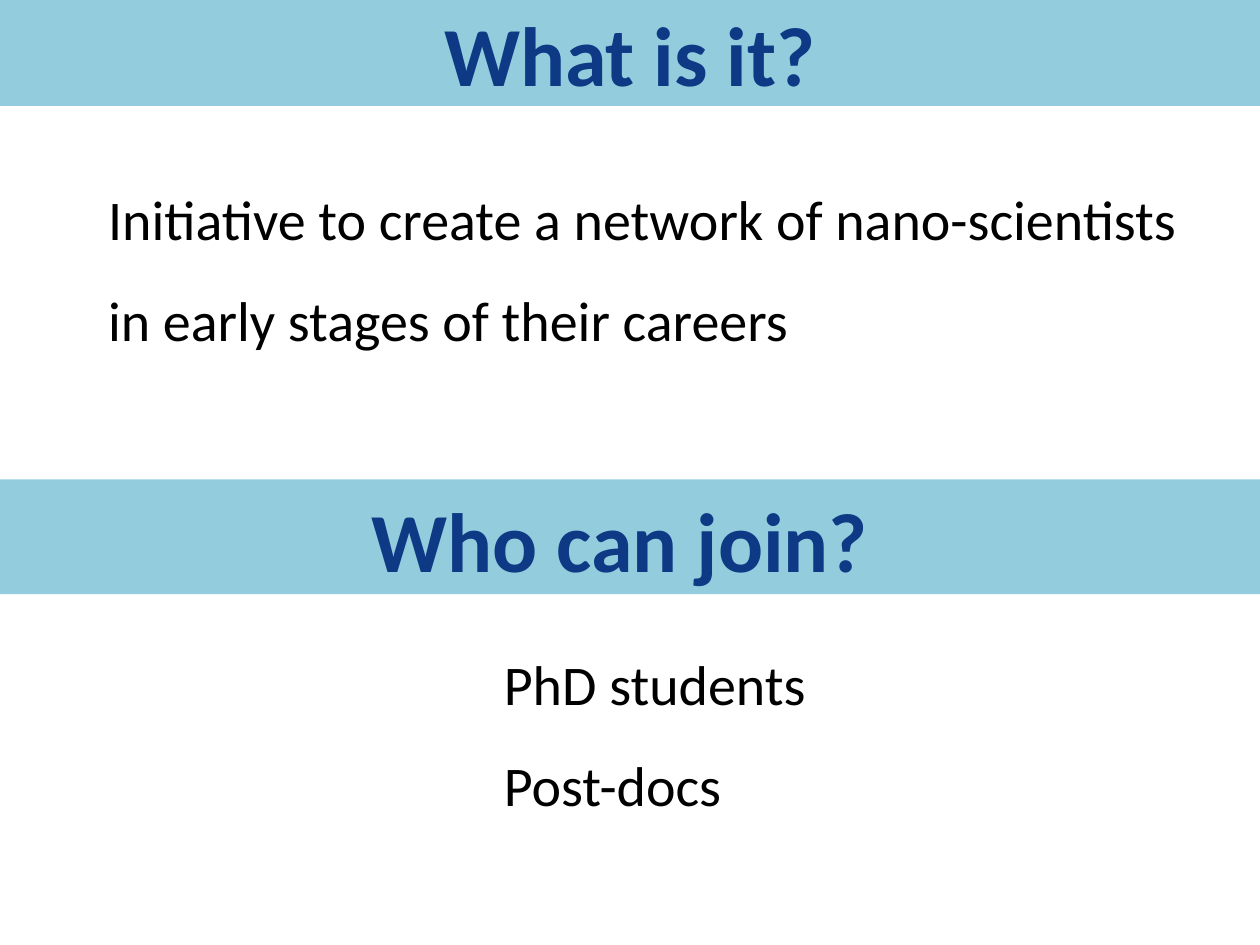
from pptx import Presentation
from pptx.dml.color import RGBColor
from pptx.enum import shapes, text
from pptx.util import Pt

SKY = RGBColor(0x93, 0xCD, 0xDD)
NAVY = RGBColor(0x0D, 0x39, 0x85)
BLACK = RGBColor(0, 0, 0)

HEAD = {"name": "Calibri", "size": Pt(48), "bold": True}
BODY = {"name": "Calibri", "size": Pt(32), "bold": False}
WIDE = 720
INDENT = 35.3


def write(slide, box, lines, form, color, anchor):
    """Place a wrapped text box and return its paragraphs."""
    frame = slide.shapes.add_textbox(*map(Pt, box)).text_frame
    frame.word_wrap = True
    frame.vertical_anchor = anchor
    frame.text = "\n".join(lines)
    for para in frame.paragraphs:
        for key, value in form.items():
            setattr(para.font, key, value)
        para.font.color.rgb = color
    return frame.paragraphs


def add_band(slide, top, height, title, box):
    """Full-width bar with a centred heading; box is relative to the bar."""
    bar = slide.shapes.add_shape(
        shapes.MSO_SHAPE.RECTANGLE, 0, Pt(top), Pt(WIDE), Pt(height))
    bar.shadow.inherit = False
    bar.fill.solid()
    bar.fill.fore_color.rgb = SKY
    bar.line.fill.background()
    left, down, width, tall = box
    for para in write(slide, (left, top + down, width, tall), [title],
                      HEAD, NAVY, text.MSO_ANCHOR.MIDDLE):
        para.alignment = text.PP_ALIGN.CENTER


def add_body(slide, box, lines):
    """Indented body text with open line spacing."""
    for para in write(slide, box, lines, BODY, BLACK, text.MSO_ANCHOR.TOP):
        para.line_spacing = 1.5
        props = para._p.get_or_add_pPr()
        props.set("marL", str(Pt(INDENT)))
        props.set("indent", "0")


def main():
    deck = Presentation()
    deck.slide_width, deck.slide_height = Pt(WIDE), Pt(540)
    slide = deck.slides.add_slide(deck.slide_layouts[6])

    # What it is
    add_band(slide, 0, 60.5, "What is it?", (36, 0, 648, 60.5))
    add_body(slide, (19.4, 82.8, 669.6, 123.8),
             ["Initiative to create a network of nano-scientists "
              "in early stages of their careers"])

    # Who can join
    add_band(slide, 274, 65.5, "Who can join?", (30.2, 3.9, 648, 60.5))
    add_body(slide, (245.5, 348.5, 406, 117.4), ["PhD students", "Post-docs"])

    deck.save("out.pptx")


if __name__ == "__main__":
    main()
